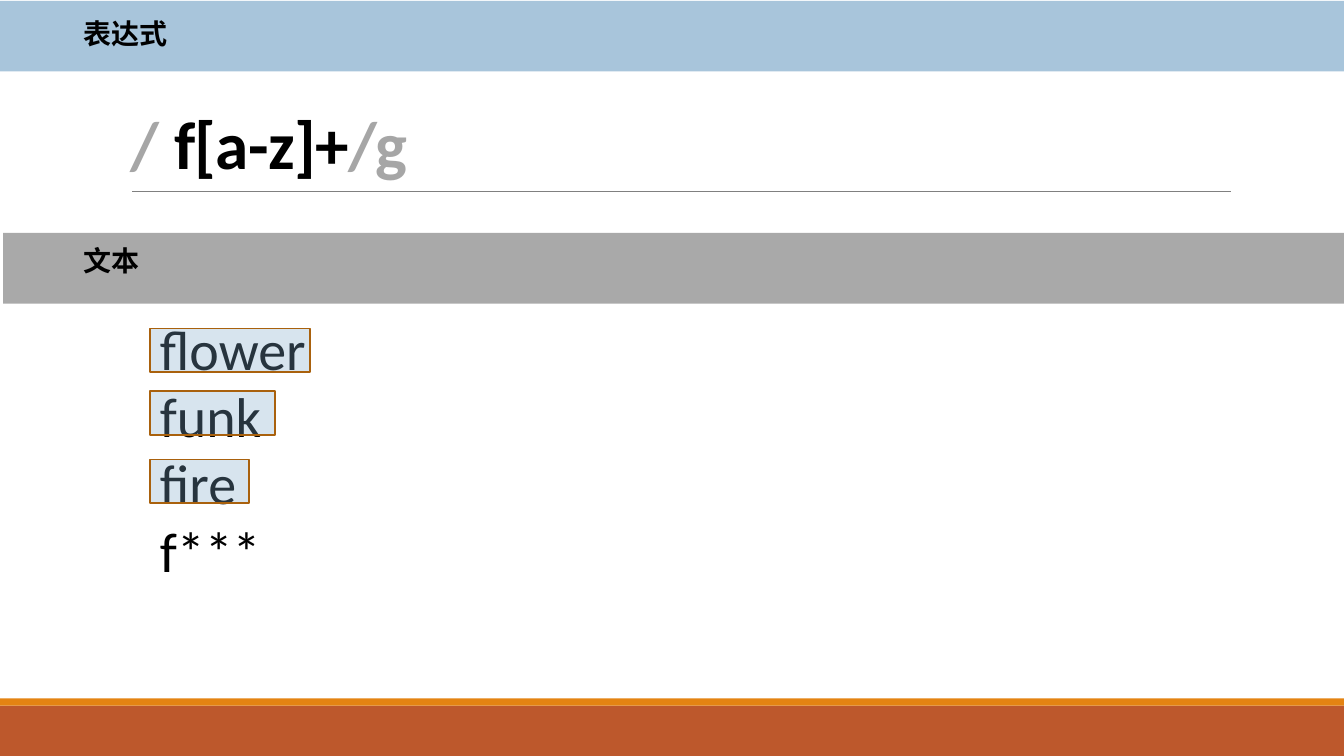
from lxml.etree import SubElement
from pptx import Presentation
from pptx.dml.color import RGBColor
from pptx.enum.shapes import MSO_CONNECTOR as LineKind, MSO_SHAPE as Preset
from pptx.enum.text import MSO_ANCHOR as Anchor, MSO_AUTO_SIZE as AutoSize
from pptx.oxml.ns import qn
from pptx.util import Cm, Pt

BLACK = RGBColor(0x00, 0x00, 0x00)
GRAY = RGBColor(0x80, 0x80, 0x80)
DELIMITER_GRAY = RGBColor(0xA6, 0xA6, 0xA6)
BLUE = RGBColor(0x7E, 0xA9, 0xCA)
BROWN = RGBColor(0xA9, 0x61, 0x0D)
ORANGE = RGBColor(0xE4, 0x83, 0x12)
RUST = RGBColor(0xBD, 0x58, 0x2C)

LATIN_FONT = "Calibri"
CJK_FONT = "Noto Sans CJK SC"
WIDTH, HEIGHT = Cm(33.87), Cm(19.05)


def add_block(slide, left, top, width, height, color, opacity=100, outline=None):
    block = slide.shapes.add_shape(Preset.RECTANGLE, left, top, width, height)
    block.shadow.inherit = False
    block.fill.solid()
    block.fill.fore_color.rgb = color
    if opacity < 100:
        srgb = block.fill._xPr.find(".//" + qn("a:srgbClr"))
        SubElement(srgb, qn("a:alpha")).set("val", str(opacity * 1000))
    if outline is None:
        block.line.fill.background()
    else:
        block.line.color.rgb = outline
        block.line.width = Pt(1.25)


def add_footer(slide, top):
    stripe = Cm(0.18)
    add_block(slide, 0, top + stripe, WIDTH, HEIGHT - top - stripe, RUST)
    add_block(slide, 0, top, WIDTH, stripe, ORANGE)


def add_heading_band(slide, left, top, color, heading, heading_top, heading_width):
    add_block(slide, left, top, WIDTH - left, Cm(1.78), color, opacity=67)
    label = slide.shapes.add_textbox(Cm(1.85), top + heading_top, heading_width, Cm(1.12))
    label.text_frame.word_wrap = False
    label.text_frame.auto_size = AutoSize.SHAPE_TO_FIT_TEXT
    paragraph = label.text_frame.paragraphs[0]
    run = paragraph.add_run()
    run.text = heading
    run.font.size, run.font.bold = Pt(20), True
    run.font.color.rgb = BLACK
    run.font.name = CJK_FONT
    # East Asian typeface for the Chinese characters
    SubElement(run._r.get_or_add_rPr(), qn("a:ea")).set("typeface", CJK_FONT)


def add_expression(slide, left, top, width, height):
    expression = slide.shapes.add_textbox(left, top, width, height)
    frame = expression.text_frame
    frame.word_wrap = True
    frame.vertical_anchor = Anchor.BOTTOM
    paragraph = frame.paragraphs[0]
    paragraph.line_spacing = 0.85
    paragraph.font.name = LATIN_FONT
    paragraph.font.size = Pt(48)
    paragraph.font.bold = True
    for part, color in (("/ ", DELIMITER_GRAY), ("f[a-z]+", BLACK), ("/g", DELIMITER_GRAY)):
        run = paragraph.add_run()
        run.text = part
        run.font.color.rgb = color
        run._r.get_or_add_rPr().set("spc", "-50")

    # Rule under the expression
    rule_left, rule_top = left + Cm(0.28), top + height + Cm(0.08)
    rule = slide.shapes.add_connector(
        LineKind.STRAIGHT, rule_left, rule_top, rule_left + Cm(27.69), rule_top)
    rule.line.color.rgb = GRAY
    rule.line.width = Pt(0.5)
    SubElement(rule._element.spPr, qn("a:effectLst"))


def add_sample_text(slide, left, top, width, height):
    samples = slide.shapes.add_textbox(left, top, width, height)
    frame = samples.text_frame
    frame.word_wrap = True
    frame.auto_size = AutoSize.SHAPE_TO_FIT_TEXT
    frame.text = "flower\nfunk\nfire\nf***"
    for paragraph in frame.paragraphs:
        paragraph.font.name = LATIN_FONT
        paragraph.font.size = Pt(40)
        paragraph.font.color.rgb = BLACK

    # Highlights over the matching words: offset from the top, width
    for offset, match_width in ((0.48, 4.04), (2.06, 3.15), (3.78, 2.49)):
        add_block(slide, left, top + Cm(offset), Cm(match_width), Cm(1.1),
                  BLUE, opacity=31, outline=BROWN)


def main():
    deck = Presentation()
    deck.slide_width, deck.slide_height = WIDTH, HEIGHT
    slide = deck.slides.add_slide(deck.slide_layouts[6])

    add_footer(slide, Cm(17.6))
    add_heading_band(slide, Cm(0.08), Cm(5.87), GRAY, "文本", Cm(0.15), Cm(1.93))
    add_sample_text(slide, Cm(3.78), Cm(7.8), Cm(9.7), Cm(7.09))
    add_heading_band(slide, 0, Cm(0.02), BLUE, "表达式", Cm(0.28), Cm(2.67))
    add_expression(slide, Cm(3.05), Cm(0.71), Cm(17.07), Cm(4.04))

    deck.save("out.pptx")


if __name__ == "__main__":
    main()
